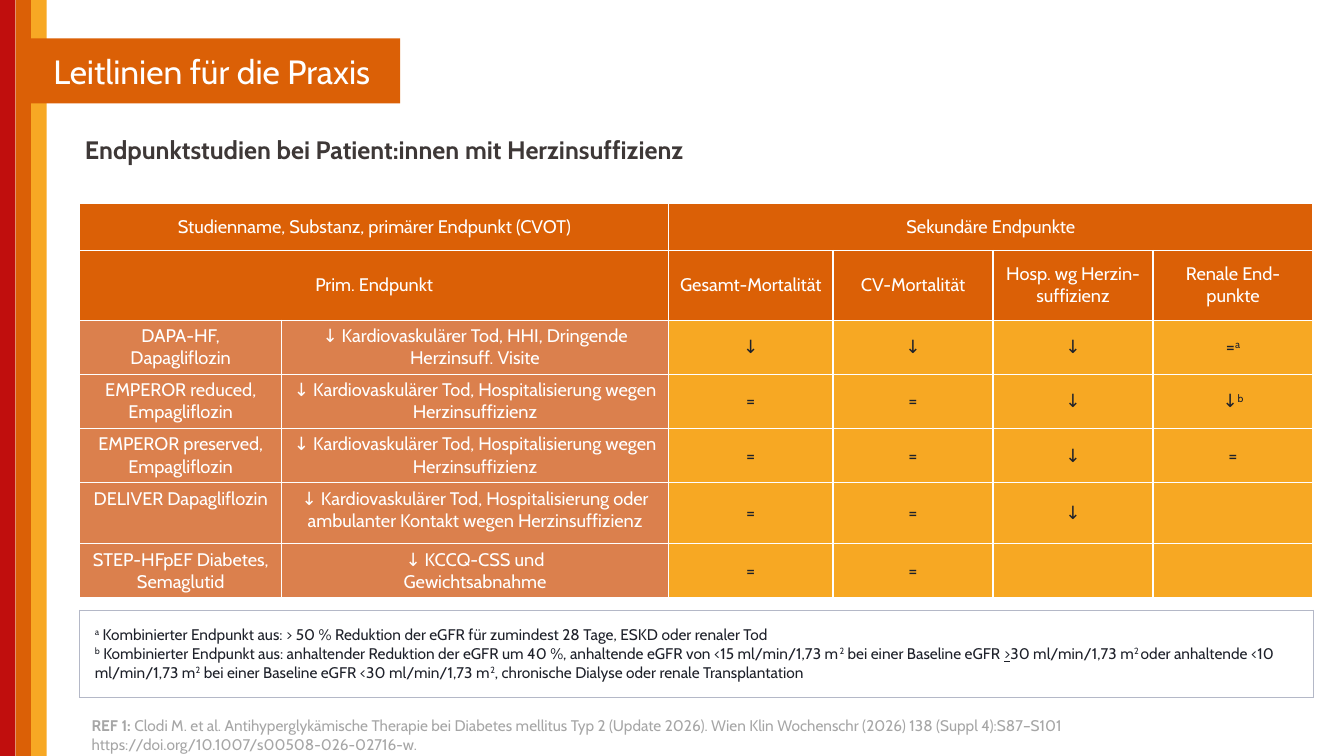
"""Build a slide on endpoint trials in patients with heart failure."""
from lxml.etree import SubElement
from pptx import Presentation
from pptx.dml.color import RGBColor
from pptx.enum.shapes import MSO_SHAPE
from pptx.enum.text import MSO_ANCHOR, MSO_AUTO_SIZE, PP_ALIGN
from pptx.oxml.ns import qn
from pptx.util import Pt

HUES = {
    "red": "C00E0D", "rust": "DB6006", "clay": "DB804D", "gold": "F7A824",
    "amber": "F7A823", "white": "FFFFFF", "ink": "1E212A", "brown": "3E3837",
    "grey": "A6A6A6", "rule": "B4B8C7",
}
HUES = {name: RGBColor.from_string(code) for name, code in HUES.items()}


def write(frame, text, size, hue, align=PP_ALIGN.LEFT):
    """Fill a frame; | splits runs, led by ^ raised, _ underlined or * bold."""
    for i, line in enumerate(text.split("\n")):
        para = frame.paragraphs[0] if i == 0 else frame.add_paragraph()
        para.alignment = align
        for part in line.split("|"):
            if not part:
                continue
            mark = part[0] if part[0] in "^_*" else ""
            run = para.add_run()
            run.text = part[len(mark):]
            font = run.font
            font.name, font.size, font.bold = "Cabin", Pt(size), mark == "*"
            font.color.rgb = HUES[hue]
            if mark == "_":
                font.underline = True
            if mark == "^":
                run._r.get_or_add_rPr().set("baseline", "30000")


def edge(cell, hue):
    """Draw a thin line on all four sides of a cell."""
    props = cell._tc.get_or_add_tcPr()
    for side in ("a:lnL", "a:lnR", "a:lnT", "a:lnB"):
        line = SubElement(props, qn(side), w=str(Pt(1)))
        fill = SubElement(line, qn("a:solidFill"))
        SubElement(fill, qn("a:srgbClr"), val=str(HUES[hue]))


deck = Presentation()
deck.slide_width, deck.slide_height = Pt(960), Pt(540)
slide = deck.slides.add_slide(deck.slide_layouts[5])
shapes = slide.shapes
slide.background.fill.solid()
slide.background.fill.fore_color.rgb = HUES["white"]

bars = [(i * 11.1, 0, 11.1, 540, hue)
        for i, hue in enumerate(("red", "rust", "gold"))]
for *place, hue in bars + [(16.6, 27.5, 269.2, 46.3, "rust")]:
    bar = shapes.add_shape(MSO_SHAPE.RECTANGLE, *map(Pt, place))
    bar.shadow.inherit = False
    bar.fill.solid()
    bar.fill.fore_color.rgb = HUES[hue]
    bar.line.fill.background()
bar.text_frame.vertical_anchor = MSO_ANCHOR.MIDDLE
write(bar.text_frame, "Leitlinien für die Praxis", 24, "white", PP_ALIGN.CENTER)

title = shapes.title
title.left, title.top, title.width, title.height = map(Pt, (53.5, 94.5, 880.5, 34.5))
frame = title.text_frame
frame.auto_size = MSO_AUTO_SIZE.NONE
frame.vertical_anchor = MSO_ANCHOR.TOP
write(frame, "*Endpunktstudien bei Patient:innen mit Herzinsuffizienz", 18, "brown")
frame.paragraphs[0].line_spacing = 0.9

HOSP = "↓ Kardiovaskulärer Tod, Hospitalisierung "
ROWS = [
    ("Studienname, Substanz, primärer Endpunkt (CVOT)", "",
     "Sekundäre Endpunkte", "", "", ""),
    ("Prim. Endpunkt", "", "Gesamt-Mortalität", "CV-Mortalität",
     "Hosp. wg Herzin-suffizienz", "Renale End- punkte"),
    ("DAPA-HF, Dapagliflozin",
     "↓ Kardiovaskulärer Tod, HHI, Dringende Herzinsuff. Visite",
     "↓", "↓", "↓", "=|^a"),
    ("EMPEROR reduced, Empagliflozin", HOSP + "wegen Herzinsuffizienz",
     "=", "=", "↓", "↓|^b"),
    ("EMPEROR preserved, Empagliflozin", HOSP + "wegen Herzinsuffizienz",
     "=", "=", "↓", "="),
    ("DELIVER Dapagliflozin",
     HOSP + "oder ambulanter Kontakt wegen Herzinsuffizienz",
     "=", "=", "↓", ""),
    ("STEP-HFpEF Diabetes, Semaglutid", "↓ KCCQ-CSS und\nGewichtsabnahme",
     "=", "=", "", ""),
]
WIDE = (144, 276.5, 117.5, 114.3, 114.3, 114.3)
HIGH = (33.4, 49.7, 38.6, 38.6, 38.6, 43.5, 38.6)

grid = shapes.add_table(len(HIGH), len(WIDE), Pt(57), Pt(145.6),
                        Pt(sum(WIDE)), Pt(sum(HIGH))).table
grid.first_row = grid.horz_banding = False
for col, width in zip(grid.columns, WIDE):
    col.width = Pt(width)
for r, (row, height) in enumerate(zip(ROWS, HIGH)):
    grid.rows[r].height = Pt(height)
    for c, text in enumerate(row):
        cell = grid.cell(r, c)
        head, name = r < 2, c < 2
        edge(cell, "white")
        cell.fill.solid()
        cell.fill.fore_color.rgb = HUES["rust" if head else "clay" if name else "amber"]
        cell.vertical_anchor = MSO_ANCHOR.TOP if name and not head else MSO_ANCHOR.MIDDLE
        write(cell.text_frame, text, 13, "white" if head or name else "ink",
              PP_ALIGN.CENTER)
for r, first, last in ((0, 0, 1), (0, 2, 5), (1, 0, 1)):
    grid.cell(r, first).merge(grid.cell(r, last))

NOTE = (
    "^a| Kombinierter Endpunkt aus: > 50 % Reduktion der eGFR für zumindest "
    "28 Tage, ESKD oder renaler Tod\n"
    "^b| Kombinierter Endpunkt aus: anhaltender Reduktion der eGFR um 40 %, "
    "anhaltende eGFR von <15 ml/min/1,73 m|^2| bei einer Baseline eGFR |_>|"
    "30 ml/min/1,73 m|^2 |oder anhaltende <10 ml/min/1,73 m|^2| bei einer "
    "Baseline eGFR <30 ml/min/1,73 m|^2|, chronische Dialyse oder renale "
    "Transplantation"
)
notes = shapes.add_table(1, 1, Pt(57), Pt(436), Pt(881), Pt(62)).table
notes.first_row = notes.horz_banding = False
cell = notes.cell(0, 0)
edge(cell, "rule")
cell.fill.background()
cell.margin_left = cell.margin_right = cell.margin_top = cell.margin_bottom = Pt(10.8)
write(cell.text_frame, NOTE, 11, "ink")

frame = shapes.add_textbox(Pt(58.3), Pt(508.3), Pt(890), Pt(34)).text_frame
frame.word_wrap = True
frame.auto_size = MSO_AUTO_SIZE.SHAPE_TO_FIT_TEXT
write(frame, "*REF 1: |Clodi M. et al. Antihyperglykämische Therapie bei Diabetes "
      "mellitus Typ 2 (Update 2026). Wien Klin Wochenschr (2026) 138 "
      "(Suppl 4):S87–S101\nhttps://doi.org/10.1007/s00508-026-02716-w.", 11, "grey")

deck.save("out.pptx")
